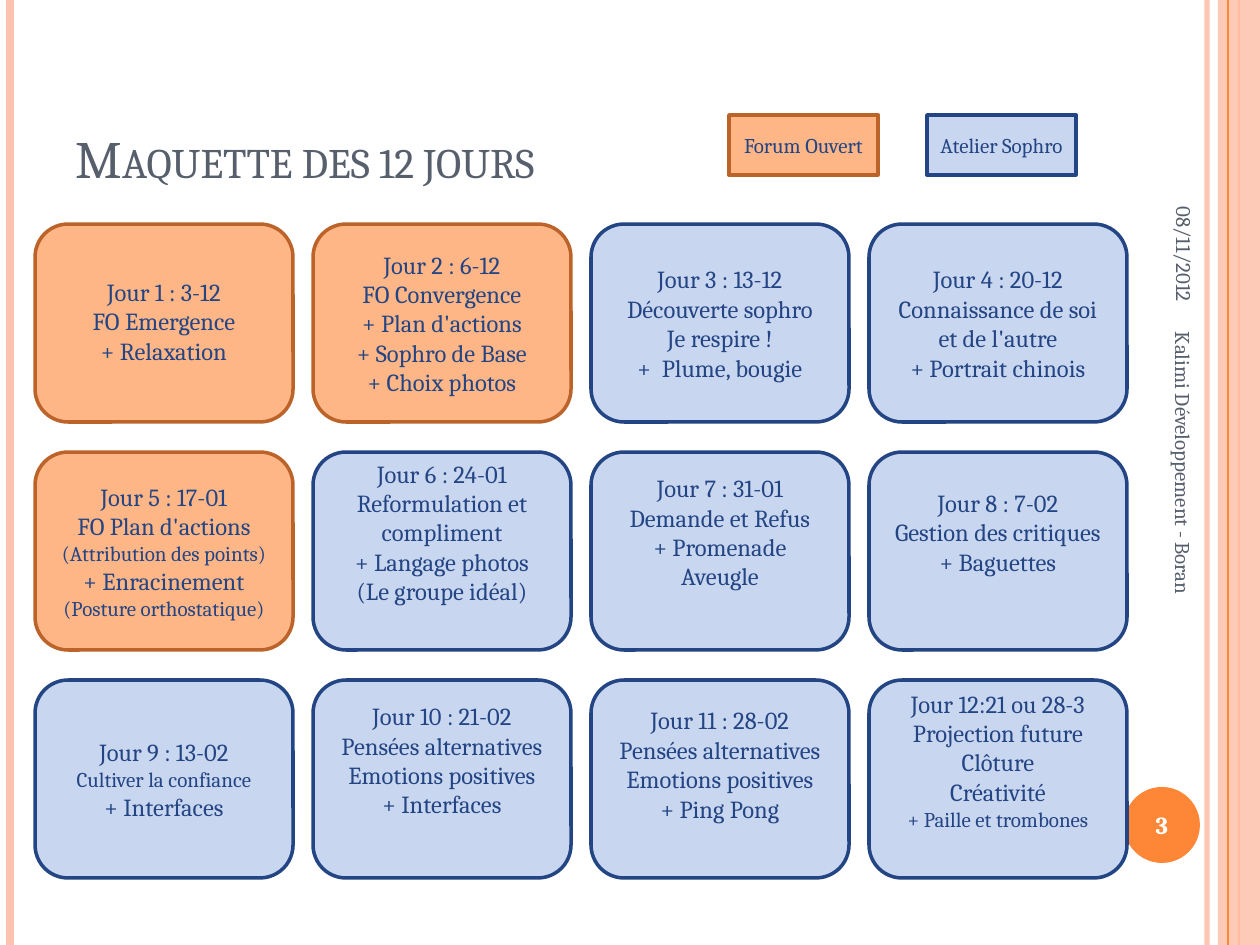
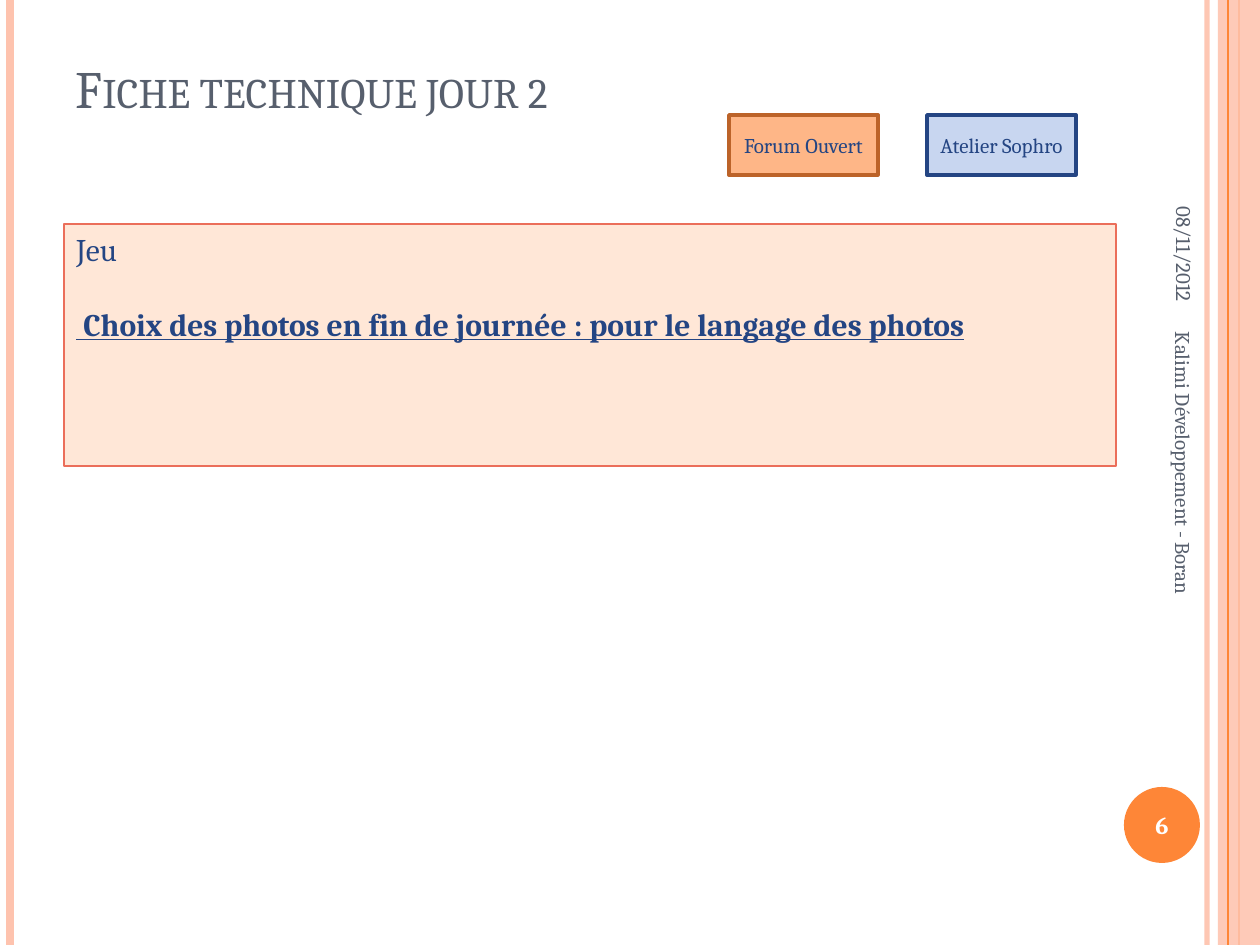
from lxml.etree import SubElement
from pptx import Presentation
from pptx.dml.color import RGBColor
from pptx.enum.shapes import MSO_CONNECTOR, MSO_SHAPE
from pptx.enum.text import MSO_ANCHOR, MSO_AUTO_SIZE, PP_ALIGN
from pptx.oxml.ns import qn
from pptx.util import Pt

SCALE = 914400 / 126
WIDE, HIGH = 1260, 945
FONT = "Cambria"
HEX = {
    "band": "FEC3AE", "orange": "FE8637", "grey": "575F6D", "white": "FFFFFF",
    "peach": "FEB687", "rust": "BC6329", "sky": "C8D6F0", "navy": "244583",
    "cream": "FFE7D7", "coral": "EB6E5A",
}
FORUM = ("peach", "rust")
SOPHRO = ("sky", "navy")

LEFT, TOP = 35, 224
STEP_X, STEP_Y = 278, 228
CARD_W, CARD_H = 258, 198
COLS = 4
INSET = 6

# Each day: style, lift of the text in px, lines (a pair gives a line its size)
DAYS = [
    (FORUM, 4, ["Jour 1 : 3-12", "FO Emergence", "+ Relaxation"]),
    (FORUM, 0, ["Jour 2 : 6-12", "FO Convergence", "+ Plan d'actions",
                "+ Sophro de Base", "+ Choix photos"]),
    (SOPHRO, 0, ["Jour 3 : 13-12", "Découverte sophro", "Je respire !",
                 "+  Plume, bougie"]),
    (SOPHRO, 0, ["Jour 4 : 20-12", "Connaissance de soi et de l'autre",
                 "+ Portrait chinois"]),
    (FORUM, 0, ["Jour 5 : 17-01", "FO Plan d'actions",
                ("(Attribution des points)", 12), "+ Enracinement",
                ("(Posture orthostatique)", 12)]),
    (SOPHRO, 38, ["Jour 6 : 24-01", "Reformulation et compliment",
                  "+ Langage photos", "(Le groupe idéal)"]),
    (SOPHRO, 38, ["Jour 7 : 31-01", "Demande et Refus", "+ Promenade Aveugle"]),
    (SOPHRO, 38, ["Jour 8 : 7-02", "Gestion des critiques", "+ Baguettes"]),
    (SOPHRO, 0, ["Jour 9 : 13-02", ("Cultiver la confiance", 12),
                 "+ Interfaces"]),
    (SOPHRO, 38, ["Jour 10 : 21-02", "Pensées alternatives",
                  "Emotions positives", "+ Interfaces"]),
    (SOPHRO, 30, ["Jour 11 : 28-02", "Pensées alternatives",
                  "Emotions positives", "+ Ping Pong"]),
    (SOPHRO, 38, ["Jour 12:21 ou 28-3", "Projection future", "Clôture",
                  "Créativité", ("+ Paille et trombones", 12)]),
]


def px(n):
    return round(n * SCALE)


def box(*nums):
    return [px(n) for n in nums]


def rgb(name):
    return RGBColor.from_string(HEX[name])


def fade(fill, cent):
    """Make a solid fill cent percent opaque."""
    color = fill._xPr.find(qn("a:solidFill"))[0]
    SubElement(color, qn("a:alpha")).set("val", str(cent * 1000))


def write(frame, lines, size, color, align=PP_ALIGN.CENTER,
          anchor=MSO_ANCHOR.MIDDLE):
    frame.word_wrap = True
    frame.vertical_anchor = anchor
    for i, line in enumerate(lines):
        text, pt = line if isinstance(line, tuple) else (line, size)
        para = frame.paragraphs[0] if i == 0 else frame.add_paragraph()
        para.text = text
        para.alignment = align
        font = para.font
        font.name, font.size = FONT, Pt(pt)
        font.color.rgb = rgb(color)


def add_bar(slide, x, width, color, cent=100):
    bar = slide.shapes.add_connector(MSO_CONNECTOR.STRAIGHT,
                                     *box(x, 0, x, HIGH))
    bar.line.width = Pt(width)
    bar.line.color.rgb = rgb(color)
    if cent < 100:
        fade(bar.line.fill, cent)
    SubElement(bar._element.spPr, qn("a:effectLst"))


def add_block(slide, kind, area, fill, edge=None, width=2):
    block = slide.shapes.add_shape(kind, *box(*area))
    block.shadow.inherit = False
    block.fill.solid()
    block.fill.fore_color.rgb = rgb(fill)
    if edge:
        block.line.color.rgb = rgb(edge)
        block.line.width = Pt(width)
    else:
        block.line.fill.background()
    return block


def add_side(slide, area, text, align):
    """Add a line of text turned to run down the right edge."""
    side = slide.shapes.add_textbox(*box(*area))
    side.rotation = 90
    write(side.text_frame, [text], 12, "grey", align)


def set_title(slide, text, height):
    title = slide.shapes.title
    title.left, title.top, title.width, title.height = box(63, 38, 1029, height)
    frame = title.text_frame
    frame.auto_size = MSO_AUTO_SIZE.NONE
    write(frame, [text], 30, "grey", PP_ALIGN.LEFT, MSO_ANCHOR.BOTTOM)
    frame.paragraphs[0].runs[0]._r.get_or_add_rPr().set("cap", "small")


def add_badge(slide, number):
    badge = add_block(slide, MSO_SHAPE.OVAL, (1124, 787, 76, 76), "orange")
    frame = badge.text_frame
    frame.margin_left = frame.margin_right = 0
    write(frame, [str(number)], 14, "white")
    frame.paragraphs[0].font.bold = True


def add_key(slide):
    for x, text, style in ((729, "Forum Ouvert", FORUM),
                           (927, "Atelier Sophro", SOPHRO)):
        key = add_block(slide, MSO_SHAPE.RECTANGLE, (x, 115, 149, 60), *style)
        write(key.text_frame, [text], 12, "navy")


def add_page(deck, title, height, number):
    """Add a slide with the bands, title, side texts, badge and key."""
    slide = deck.slides.add_slide(deck.slide_layouts[5])
    add_bar(slide, 1207, 3, "band", 93)
    add_bar(slide, 10, 4.5, "band")
    add_bar(slide, 1239, 1.5, "orange")
    band = add_block(slide, MSO_SHAPE.RECTANGLE,
                     (1218, 0, WIDE - 1218, HIGH), "band")
    fade(band.fill, 87)
    add_bar(slide, 1228, 0.75, "orange")
    add_badge(slide, number)
    set_title(slide, title, height)
    add_side(slide, (1046, 149, 277, 53), "08/11/2012", PP_ALIGN.RIGHT)
    add_side(slide, (963, 515, 441, 50), "Kalimi Développement - Boran",
             PP_ALIGN.LEFT)
    add_key(slide)
    return slide


def add_days(slide):
    for i, (style, lift, lines) in enumerate(DAYS):
        row, col = divmod(i, COLS)
        area = (LEFT + col * STEP_X, TOP + row * STEP_Y, CARD_W, CARD_H)
        card = add_block(slide, MSO_SHAPE.ROUNDED_RECTANGLE, area, *style)
        card.text_frame.margin_bottom = px(INSET + lift)
        write(card.text_frame, lines, 14, "navy")


def add_panel(slide):
    panel = add_block(slide, MSO_SHAPE.RECTANGLE, (64, TOP, 1052, 242),
                      "cream", "coral", 0.75)
    frame = panel.text_frame
    write(frame, ["Jeu", " Choix des photos en fin de journée : "
                  "pour le langage des photos"],
          18, "navy", PP_ALIGN.LEFT, MSO_ANCHOR.TOP)
    last = frame.paragraphs[1]
    last.space_before = Pt(21)
    last.font.bold = last.font.underline = True


def main():
    deck = Presentation()
    deck.slide_width, deck.slide_height = box(WIDE, HIGH)
    add_days(add_page(deck, "Maquette des 12 jours", 157, 3))
    add_panel(add_page(deck, "Fiche technique jour 2", 87, 6))
    deck.save("out.pptx")


if __name__ == "__main__":
    main()
